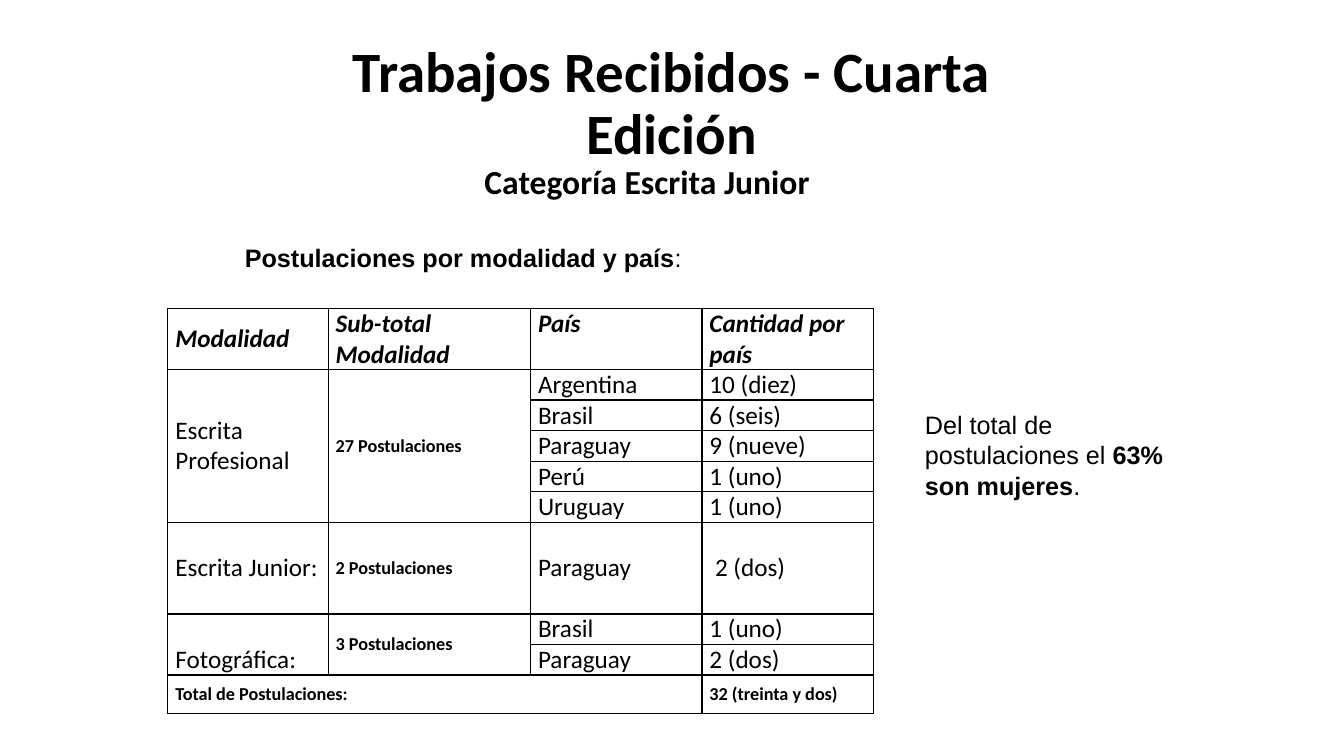
"""Build the slide with the works received in the fourth edition, by category and country."""
from lxml import etree
from pptx import Presentation
from pptx.dml.color import RGBColor
from pptx.enum.text import MSO_ANCHOR, PP_ALIGN
from pptx.oxml.ns import qn
from pptx.util import Cm, Pt

TOP, MIDDLE, BOTTOM = MSO_ANCHOR.TOP, MSO_ANCHOR.MIDDLE, MSO_ANCHOR.BOTTOM
CENTER, LEFT = PP_ALIGN.CENTER, PP_ALIGN.LEFT
BLACK = "000000"


def style(font, name, size, bold=None, italic=None):
    font.name, font.size = name, Pt(size)
    font.bold, font.italic = bold, italic
    font.color.rgb = RGBColor.from_string(BLACK)


def add_text(box, runs, name, size, anchor, align=LEFT):
    s = slide.shapes.add_textbox(*[Cm(v) for v in box])
    tf = s.text_frame
    tf.word_wrap = True
    tf.vertical_anchor = anchor
    p = tf.paragraphs[0]
    p.alignment = align
    style(p.font, name, size)
    for text, bold in runs:
        r = p.add_run()
        r.text = text
        r.font.bold = bold
    return p


prs = Presentation()
prs.slide_width, prs.slide_height = Cm(33.87), Cm(19.05)
slide = prs.slides.add_slide(prs.slide_layouts[6])

title = add_text((6.55, 0.97, 20.75, 3.18), [("Trabajos Recibidos - Cuarta Edición", True)],
                 "Calibri", 40.7, TOP, CENTER)
title.line_spacing = 0.9
add_text((11.96, 3.94, 9.5, 1.27), [("Categoría Escrita Junior", True)], "Calibri", 24, MIDDLE)
add_text((23.06, 9.4, 6.53, 3.33),
         [("Del total de postulaciones el ", False), ("63% son mujeres", True), (".", False)],
         "Arial", 18, BOTTOM)

rows = [
    ("Modalidad", "Sub-total Modalidad", "País", "Cantidad por país"),
    ("Escrita Profesional", "27 Postulaciones", "Argentina", "10 (diez)"),
    ("", "", "Brasil", "6 (seis)"),
    ("", "", "Paraguay", "9 (nueve)"),
    ("", "", "Perú", "1 (uno)"),
    ("", "", "Uruguay", "1 (uno)"),
    ("Escrita Junior:", "2 Postulaciones", "Paraguay", "2 (dos)"),
    ("Fotográfica:", "3 Postulaciones", "Brasil", "1 (uno)"),
    ("", "", "Paraguay", "2 (dos)"),
    ("Total de Postulaciones:", "", "", "32 (treinta y dos)"),
]
widths = [4.04, 5.1, 4.32, 4.32]
heights = [1.54] + [0.77] * 5 + [2.31] + [0.77] * 2 + [0.97]
last = len(rows) - 1

table = slide.shapes.add_table(len(rows), len(widths), Cm(4.23), Cm(7.77),
                               Cm(sum(widths)), Cm(sum(heights))).table
table.first_row = table.horz_banding = False
for column, width in zip(table.columns, widths):
    column.width = Cm(width)
for row, height in zip(table.rows, heights):
    row.height = Cm(height)

for i, row in enumerate(rows):
    for j, text in enumerate(row):
        cell = table.cell(i, j)
        cell.text = text
        cell.margin_left = cell.margin_right = Cm(0.19)
        cell.margin_top = cell.margin_bottom = 0
        cell.vertical_anchor = TOP if i == 0 and j in (1, 2) else MIDDLE
        small = i == last or (j == 1 and i > 0)
        style(cell.text_frame.paragraphs[0].font, "Calibri", 13 if small else 18,
              small or i == 0, i == 0)
        tcPr = cell._tc.get_or_add_tcPr()
        for side in ("a:lnL", "a:lnR", "a:lnT", "a:lnB"):
            ln = etree.SubElement(tcPr, qn(side), w=str(Pt(1)))
            fill = etree.SubElement(ln, qn("a:solidFill"))
            etree.SubElement(fill, qn("a:srgbClr"), val=BLACK)
        cell.fill.background()

table.cell(6, 3).margin_left = Cm(0.33)
table.cell(7, 0).vertical_anchor = BOTTOM
for first, end in (((1, 0), (5, 0)), ((1, 1), (5, 1)), ((7, 0), (8, 0)),
                   ((7, 1), (8, 1)), ((last, 0), (last, 2))):
    table.cell(*first).merge(table.cell(*end))

add_text((5.92, 5.97, 17.68, 1.02),
         [("Postulaciones por modalidad y país", True), (":", False)], "Arial", 18, MIDDLE)

prs.save("out.pptx")
